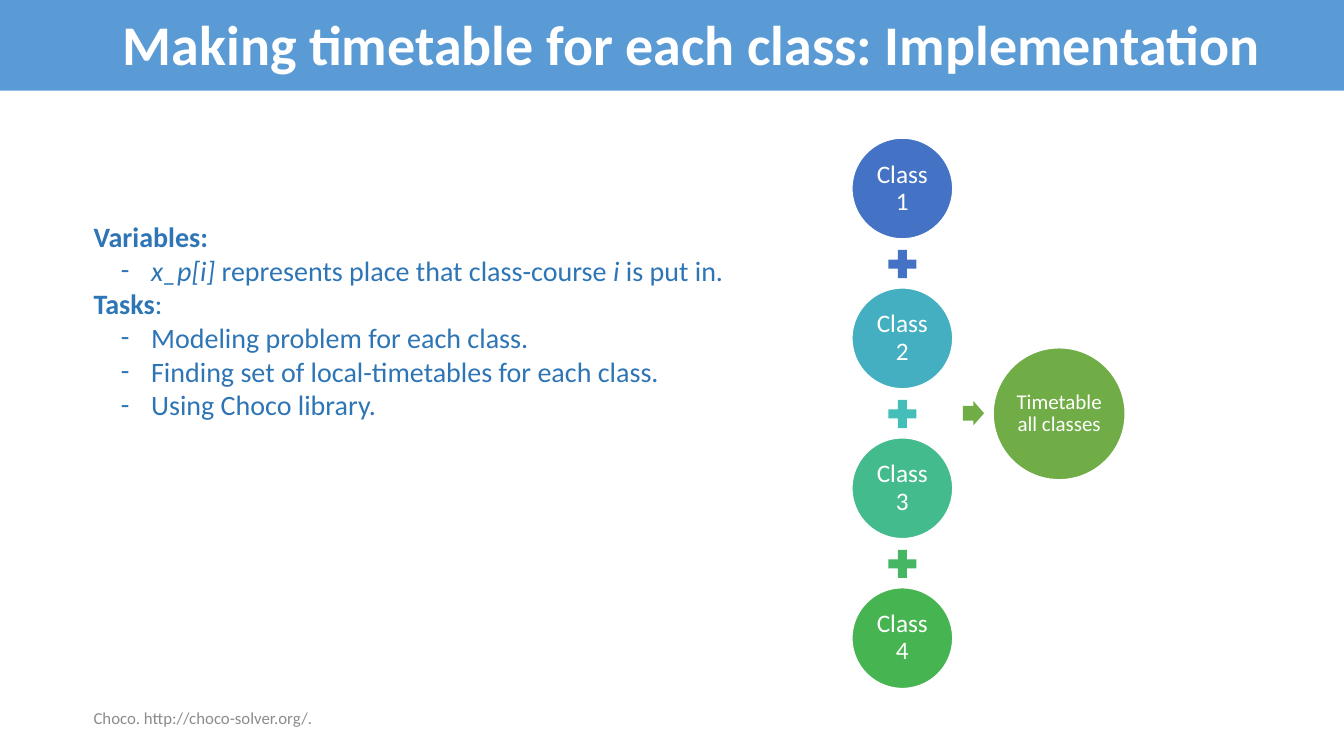
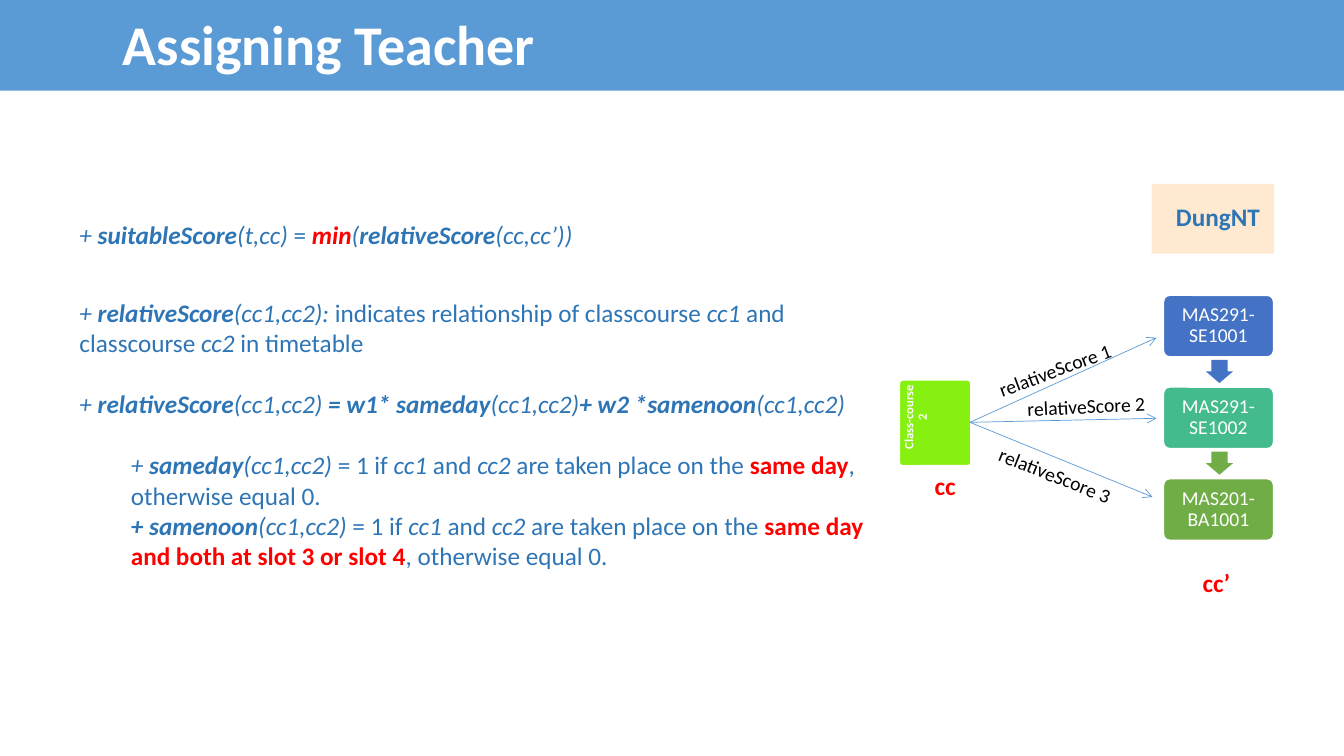
from lxml.etree import SubElement
from pptx import Presentation
from pptx.dml.color import RGBColor
from pptx.enum.shapes import MSO_CONNECTOR, MSO_SHAPE as Shape
from pptx.enum.text import MSO_ANCHOR as Anchor, MSO_AUTO_SIZE as AutoSize, PP_ALIGN as Align
from pptx.oxml.ns import qn
from pptx.util import Inches, Pt

FONT = "Calibri"
COLORS = {
    "band": "5B9BD5", "white": "FFFFFF", "black": "000000", "body": "2E75B6",
    "footer": "8C8C8C", "red": "FF0000", "blue": "4472C4", "cyan": "43AFC0",
    "turquoise": "43BEB9", "teal": "43BB8D", "emerald": "45B664",
    "green": "45B451", "olive": "70AD47", "lime": "86F011", "cream": "FFE8CC",
}
STYLES = {
    "plain": {},
    "bold": {"bold": True},
    "italic": {"italic": True},
    "both": {"bold": True, "italic": True},
    "red": {"bold": True, "color": "red"},
    "red_italic": {"bold": True, "italic": True, "color": "red"},
}
DIAGRAM = {"alignment": Align.CENTER, "line_spacing": 0.9}
CENTERED = {"alignment": Align.CENTER}
BULLET = {"margin": 0.57, "indent": -0.3, "bullet": "-"}


def rgb(name):
    return RGBColor.from_string(COLORS[name])


def set_attributes(target, values):
    for name, value in values.items():
        setattr(target, name, value)


def set_frame(frame, insets=(0.1, 0.05, 0.1, 0.05), **values):
    sides = ("margin_left", "margin_top", "margin_right", "margin_bottom")
    margins = {side: Inches(inset) for side, inset in zip(sides, insets)}
    set_attributes(frame, {"word_wrap": True, **margins, **values})


def add_span(para, text, size, color, style="plain"):
    span = para.add_run()
    span.text = text
    values = {"name": FONT, "size": Pt(size), **STYLES[style]}
    color = values.pop("color", color)
    set_attributes(span.font, values)
    span.font.color.rgb = rgb(color)


def indent(para, margin, first, bullet=None):
    properties = para._p.get_or_add_pPr()
    properties.set("marL", str(Inches(margin)))
    properties.set("indent", str(Inches(first)))
    if bullet:
        SubElement(properties, qn("a:buFont"), typeface=FONT)
        SubElement(properties, qn("a:buChar"), char=bullet)


def write_paragraphs(frame, paragraphs, size, color):
    for index, (spans, layout) in enumerate(paragraphs):
        para = frame.add_paragraph() if index else frame.paragraphs[0]
        layout = {"alignment": Align.LEFT, **layout}
        margin, first, bullet = (layout.pop(key, None) for key in ("margin", "indent", "bullet"))
        set_attributes(para, layout)
        if margin:
            indent(para, margin, first or 0, bullet)
        for text, style in spans:
            add_span(para, text, size, color, style)


def write_line(frame, text, size, color, style="plain", layout=DIAGRAM):
    write_paragraphs(frame, [([(text, style)], layout)], size, color)


def add_figure(page, kind, at, fill, line=None, adjust=(), opacity=None):
    figure = page.shapes.add_shape(kind, *map(Inches, at))
    figure.shadow.inherit = False
    figure.fill.solid()
    figure.fill.fore_color.rgb = rgb(fill)
    if line:
        figure.line.color.rgb = rgb(line)
        figure.line.width = Pt(1)
    else:
        figure.line.fill.background()
    for index, value in enumerate(adjust):
        figure.adjustments[index] = value
    if opacity:
        for color in figure.element.spPr.iter(qn("a:srgbClr")):
            SubElement(color, qn("a:alpha"), val=str(opacity * 1000))
    return figure


def add_node(page, kind, at, fill, text, size, inset, adjust=()):
    node = add_figure(page, kind, at, fill, "white", adjust)
    set_frame(node.text_frame, [inset] * 4, vertical_anchor=Anchor.MIDDLE)
    write_line(node.text_frame, text, size, "white")


def add_text(page, at, paragraphs, size, color, rotation=0, **frame_values):
    box = page.shapes.add_textbox(*map(Inches, at))
    box.rotation = rotation
    set_frame(box.text_frame, **frame_values)
    write_paragraphs(box.text_frame, paragraphs, size, color)


def add_arrow(page, start, end):
    points = map(Inches, (*start, *end))
    arrow = page.shapes.add_connector(MSO_CONNECTOR.STRAIGHT, *points)
    arrow.line.color.rgb = rgb("band")
    arrow.line.width = Pt(0.5)
    properties = arrow.element.spPr
    SubElement(properties.find(qn("a:ln")), qn("a:tailEnd"), type="arrow")
    SubElement(properties, qn("a:effectLst"))


def add_page(deck, title):
    page = deck.slides.add_slide(deck.slide_layouts[6])
    band = add_figure(page, Shape.RECTANGLE, (0, 0, 13.33, 0.9), "band")
    set_frame(band.text_frame, (1.22, 0.05, 0.1, 0.09), vertical_anchor=Anchor.MIDDLE)
    write_line(band.text_frame, title, 40, "white", "bold", {})
    return page


def add_class_chain(page):
    top, step, size = 1.37, 1.487, 1
    for index, fill in enumerate(("blue", "cyan", "teal", "green")):
        at = (8.45, top + index * step, size, size)
        add_node(page, Shape.OVAL, at, fill, f"Class {index + 1}", 18, 0.03)
    for index, fill in enumerate(("blue", "turquoise", "emerald")):
        at = (8.76, top + index * step + 1.06, 0.38, 0.38)
        add_figure(page, Shape.MATH_PLUS, at, fill)
    add_figure(page, Shape.RIGHT_ARROW, (9.55, 3.98, 0.21, 0.24), "olive", adjust=(0.6, 0.5))
    add_node(page, Shape.OVAL, (9.85, 3.45, 1.31, 1.31), "olive", "Timetable all classes", 15, 0.02)


def build_timetable(deck):
    page = add_page(deck, "Making timetable for each class: Implementation")
    body = [
        ([("Variables:", "bold")], {}),
        ([("x_p[i]", "italic"), (" represents place that class-course ", "plain"),
          ("i", "italic"), (" is put in.", "plain")], BULLET),
        ([("Tasks", "bold"), (":", "plain")], {}),
    ]
    tasks = ("Modeling problem for each class.",
             "Finding set of local-timetables for each class.",
             "Using Choco library.")
    body += [([(task, "plain")], BULLET) for task in tasks]
    add_text(page, (0.83, 2.13, 6.81, 2.46), body, 20, "body")
    source = [([("Choco. http://choco-solver.org/.", "plain")], {})]
    add_text(page, (0.83, 6.92, 4.5, 0.4), source, 12, "footer", vertical_anchor=Anchor.MIDDLE)
    add_class_chain(page)


def slot_rule(name, lead_style, condition):
    return [
        ("+ ", lead_style), (name, "both"), ("(cc1,cc2)", "italic"), (" = 1 if ", "plain"),
        ("cc1", "italic"), (" and ", "plain"), ("cc2", "italic"),
        (" are taken place on the ", "plain"), (condition, "red"),
        (", otherwise equal 0.", "plain"),
    ]


def add_score_rules(page):
    pair = ("(cc1,cc2)", "italic")
    score = [("+ ", "italic"), ("relativeScore", "both")]
    gap = {"space_before": Pt(22)}
    rules = [
        ([("+ ", "italic"), ("suitableScore", "both"), ("(t,cc)", "italic"), (" = ", "plain"),
          ("min", "red_italic"), ("(", "italic"), ("relativeScore", "both"),
          ("(cc,cc’))", "italic")], {}),
        (score + [("(cc1,cc2): ", "italic"),
                  ("indicates relationship of classcourse ", "plain"), ("cc1", "italic"),
                  (" and classcourse ", "plain"), ("cc2", "italic"),
                  (" in timetable", "plain")], {"space_before": Pt(34)}),
        (score + [pair, (" = w1* sameday", "both"), pair, ("+ w2 *samenoon", "both"), pair], gap),
        (slot_rule("sameday", "italic", "same day"), {"margin": 0.51, **gap}),
        (slot_rule("samenoon", "both", "same day and both at slot 3 or slot 4"), {"margin": 0.51}),
    ]
    add_text(page, (0.69, 2.13, 8.3, 4.68), rules, 18, "body")


def add_course_column(page):
    top, step = 2.93, 0.91
    courses = (("MAS291-SE1001", "blue"), ("MAS291-SE1002", "teal"), ("MAS201-BA1001", "olive"))
    for index, (course, fill) in enumerate(courses):
        at = (11.54, top + index * step, 1.09, 0.61)
        add_node(page, Shape.ROUNDED_RECTANGLE, at, fill, course, 14, 0.06, (0.1,))
    for index, fill in enumerate(("blue", "olive")):
        at = (11.96, top + index * step + 0.64, 0.27, 0.23)
        add_figure(page, Shape.DOWN_ARROW, at, fill, adjust=(0.6, 0.5))


def add_scores(page):
    scores = (((11.47, 3.35), (9.78, 3.5), 339.6),
              ((11.47, 4.15), (10.09, 3.86), 357),
              ((11.43, 4.93), (9.78, 4.55), 21.5))
    for number, (end, corner, angle) in enumerate(scores, 1):
        add_arrow(page, (9.62, 4.19), end)
        label = [([(f"relativeScore {number}", "plain")], {})]
        add_text(page, (*corner, 1.38, 0.34), label, 14, "black", angle,
                 word_wrap=False, auto_size=AutoSize.SHAPE_TO_FIT_TEXT)


def build_teacher(deck):
    page = add_page(deck, "Assigning Teacher")
    add_course_column(page)
    add_figure(page, Shape.ROUNDED_RECTANGLE, (8.92, 3.77, 0.71, 0.85), "lime", "white", (0.05,))
    add_text(page, (8.64, 4.05, 0.7, 0.14), [([("Class-course 2", "bold")], DIAGRAM)],
             9, "white", 270, insets=(0, 0.03, 0.04, 0))
    add_scores(page)
    teacher = add_figure(page, Shape.RECTANGLE, (11.43, 1.83, 1.2, 0.68), "cream", "cream", opacity=90)
    set_frame(teacher.text_frame, (0.19, 0.09, 0.09, 0.09), vertical_anchor=Anchor.MIDDLE)
    write_line(teacher.text_frame, "DungNT", 18, "body", "bold")
    add_score_rules(page)
    for text, left, top in (("cc’", 11.56, 5.58), ("cc", 8.87, 4.62)):
        add_text(page, (left, top, 1.01, 0.4), [([(text, "bold")], CENTERED)], 18, "red")


def main():
    deck = Presentation()
    deck.slide_width, deck.slide_height = Inches(13.33), Inches(7.5)
    build_timetable(deck)
    build_teacher(deck)
    deck.save("out.pptx")


if __name__ == "__main__":
    main()
